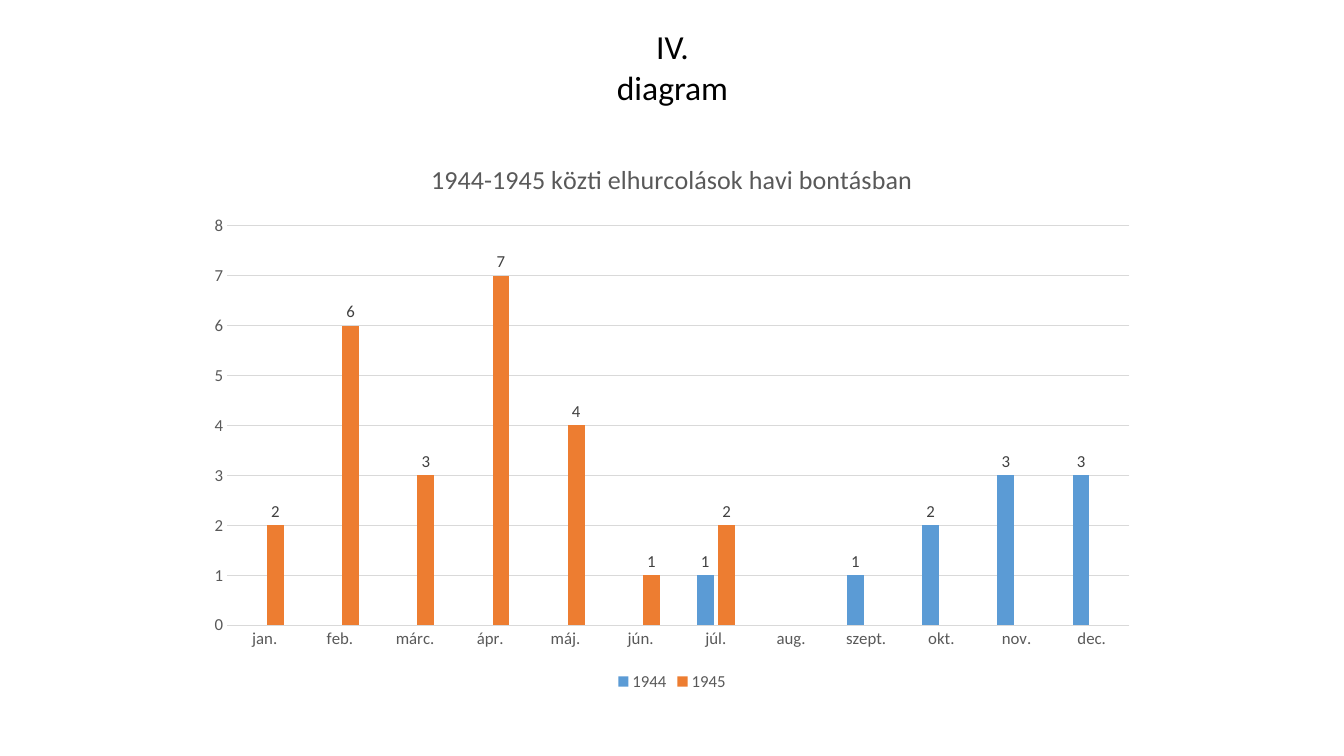
from pptx import Presentation
from pptx.chart.data import CategoryChartData
from pptx.dml.color import RGBColor
from pptx.enum.chart import XL_CHART_TYPE, XL_LABEL_POSITION, XL_LEGEND_POSITION, XL_TICK_MARK
from pptx.enum.text import MSO_ANCHOR, MSO_AUTO_SIZE, PP_ALIGN
from pptx.util import Inches, Pt

COLUMNS = XL_CHART_TYPE.COLUMN_CLUSTERED
OUTSIDE_END = XL_LABEL_POSITION.OUTSIDE_END
BOTTOM = XL_LEGEND_POSITION.BOTTOM
NO_TICK = XL_TICK_MARK.NONE
TOP = MSO_ANCHOR.TOP
GROW = MSO_AUTO_SIZE.SHAPE_TO_FIT_TEXT
CENTER = PP_ALIGN.CENTER

FONT = "Calibri"
BLACK, GREY, LABEL_GREY, GRID_GREY = "000000", "595959", "404040", "D9D9D9"

HEADING = "IV. diagram"
CHART_TITLE = "1944-1945 közti elhurcolások havi bontásban"
MONTHS = ["jan.", "feb.", "márc.", "ápr.", "máj.", "jún.",
          "júl.", "aug.", "szept.", "okt.", "nov.", "dec."]
YEARS = {
    "1944": ("5B9BD5", [None] * 6 + [1, None, 1, 2, 3, 3]),
    "1945": ("ED7D31", [2, 6, 3, 7, 4, 1, 2] + [None] * 5),
}


def colour(hex_code):
    return RGBColor.from_string(hex_code)


def set_all(target, formats):
    for name, value in formats.items():
        setattr(target, name, value)


def style_font(font, size, hex_code):
    set_all(font, {"name": FONT, "size": Pt(size), "bold": False})
    font.color.rgb = colour(hex_code)


def style_line(line):
    line.color.rgb = colour(GRID_GREY)
    line.width = Pt(0.75)


def place_heading(page, left, top, width, height):
    title = page.shapes.title
    set_all(title, {"left": Inches(left), "top": Inches(top),
                    "width": Inches(width), "height": Inches(height)})
    frame = title.text_frame
    set_all(frame, {"text": HEADING, "word_wrap": True,
                    "vertical_anchor": TOP, "auto_size": GROW})
    para = frame.paragraphs[0]
    para.alignment = CENTER
    style_font(para.runs[0].font, 24, BLACK)


def style_axes(chart):
    for axis in (chart.category_axis, chart.value_axis):
        set_all(axis, {"major_tick_mark": NO_TICK, "minor_tick_mark": NO_TICK})
        style_font(axis.tick_labels.font, 12, GREY)
    style_line(chart.category_axis.format.line)
    values = chart.value_axis
    values.format.line.fill.background()
    set_all(values, {"minimum_scale": 0, "maximum_scale": 8, "major_unit": 1})
    style_line(values.major_gridlines.format.line)


def style_columns(plot):
    set_all(plot, {"gap_width": 219, "overlap": -27, "vary_by_categories": False})
    for series, (fill, _) in zip(plot.series, YEARS.values()):
        series.format.fill.solid()
        series.format.fill.fore_color.rgb = colour(fill)
        labels = series.data_labels
        set_all(labels, {"show_value": True, "position": OUTSIDE_END})
        style_font(labels.font, 12, LABEL_GREY)


def place_chart(page, left, top, width, height):
    data = CategoryChartData(number_format="General")
    data.categories = MONTHS
    for year, (_, counts) in YEARS.items():
        data.add_series(year, counts)
    box = [Inches(length) for length in (left, top, width, height)]
    chart = page.shapes.add_chart(COLUMNS, *box, data).chart
    style_font(chart.font, 10, BLACK)

    # Chart title
    title_frame = chart.chart_title.text_frame
    title_frame.text = CHART_TITLE
    style_font(title_frame.paragraphs[0].runs[0].font, 18.6, GREY)

    # Axes and columns
    style_axes(chart)
    style_columns(chart.plots[0])

    # Legend
    chart.has_legend = True
    set_all(chart.legend, {"position": BOTTOM, "include_in_layout": False})
    style_font(chart.legend.font, 12, GREY)


def main():
    deck = Presentation()
    set_all(deck, {"slide_width": Inches(13.33), "slide_height": Inches(7.5)})
    page = deck.slides.add_slide(deck.slide_layouts.get_by_name("Title Only"))
    place_chart(page, 1.94, 1.39, 9.45, 5.51)
    place_heading(page, 5.82, 0.21, 1.7, 0.5)
    deck.save("out.pptx")


if __name__ == "__main__":
    main()
